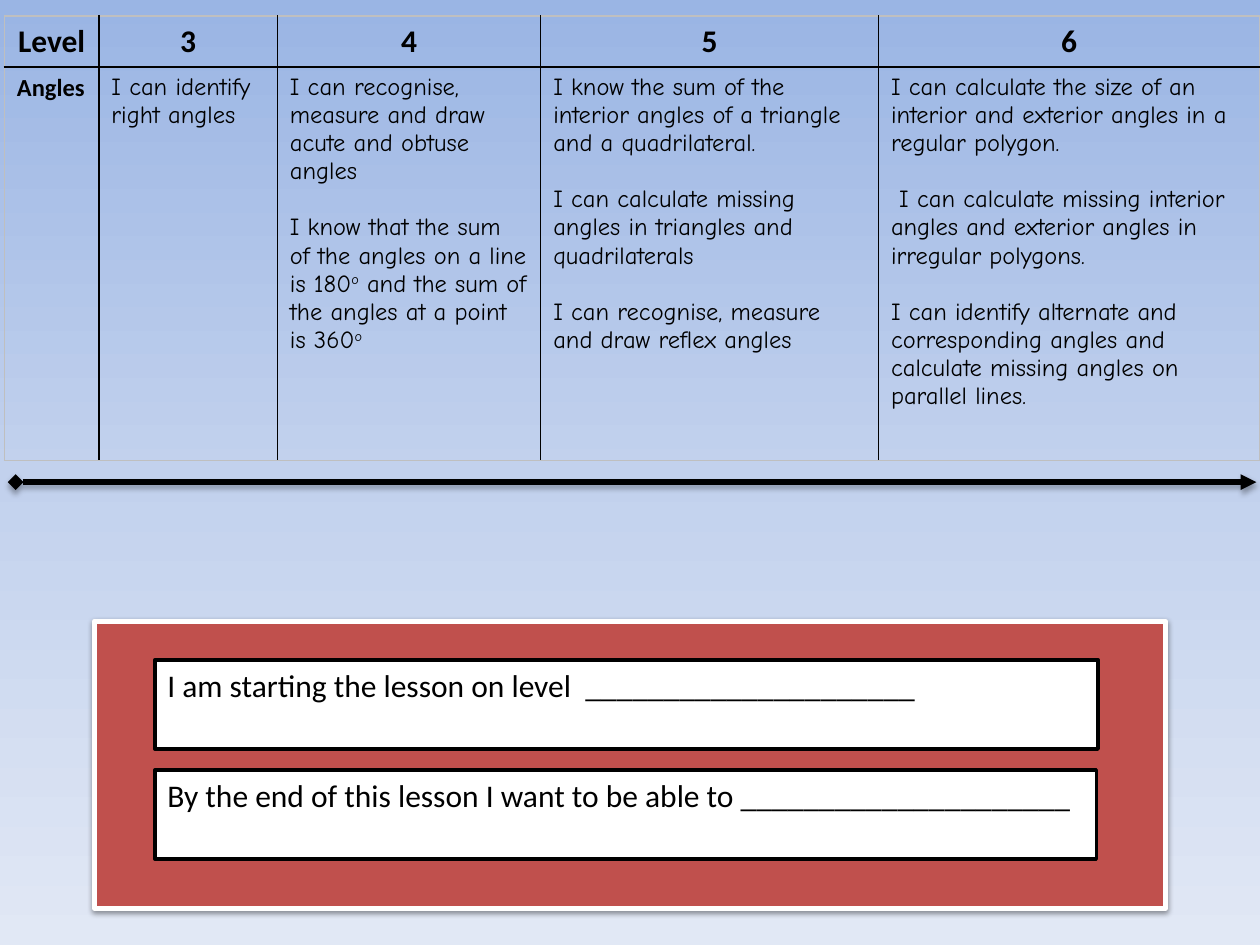
import copy

import pptx
import pptx.dml.color
import pptx.enum.shapes
import pptx.enum.text
import pptx.oxml
import pptx.oxml.ns
import pptx.util

Pt = pptx.util.Pt
RGBColor = pptx.dml.color.RGBColor
qn = pptx.oxml.ns.qn
ALIGN = pptx.enum.text.PP_ALIGN

BLACK = RGBColor(0x00, 0x00, 0x00)
WHITE = RGBColor(0xFF, 0xFF, 0xFF)
RED = RGBColor(0xC0, 0x50, 0x4D)
GREY = RGBColor(0xBF, 0xBF, 0xBF)
SKY_STOPS = [
    (0, RGBColor(0x9A, 0xB5, 0xE4)),
    (0.5, RGBColor(0xC2, 0xD1, 0xED)),
    (1, RGBColor(0xE1, 0xE8, 0xF5)),
]

HEADER = {"name": "Calibri", "size": Pt(18), "bold": True}
TOPIC = {"name": "Calibri", "size": Pt(14), "bold": True}
STATEMENT = {"name": "Comic Neue", "size": Pt(14), "bold": False}
PROMPT = {"name": "Calibri", "size": Pt(18), "bold": False}

COLUMN_WIDTHS = [54, 102, 150.5, 193, 218]
ROW_HEIGHTS = [29, 225]
DEGREE = "^"
LEVELS = [
    ("Level", ["Angles"]),
    ("3", ["I can identify right angles"]),
    ("4", [
        "I can recognise, measure and draw acute and obtuse angles",
        "I know that the sum of the angles on a line is 180^ and the sum of "
        "the angles at a point is 360^",
    ]),
    ("5", [
        "I know the sum of the interior angles of a triangle and a quadrilateral.",
        "I can calculate missing angles in triangles and quadrilaterals",
        "I can recognise, measure and draw reflex angles",
    ]),
    ("6", [
        "I can calculate the size of an interior and exterior angles in a "
        "regular polygon.",
        " I can calculate missing interior angles and exterior angles in "
        "irregular polygons.",
        "I can identify alternate and corresponding angles and calculate "
        "missing angles on parallel lines.",
    ]),
]
BLANK = "_" * 21
PROMPTS = [
    (377, 539, "I am starting the lesson on level  " + BLANK),
    (440, 538, "By the end of this lesson I want to be able to " + BLANK),
]


def element(xml):
    namespace = pptx.oxml.ns.nsdecls("a")
    return pptx.oxml.parse_xml(xml.replace(">", f" {namespace}>", 1))


def set_background(slide):
    fill = slide.background.fill
    fill.gradient()
    fill.gradient_angle = 270
    stop_list = slide.element.find(".//" + qn("a:gsLst"))
    stop_list.append(copy.deepcopy(stop_list[-1]))
    for stop, (position, color) in zip(fill.gradient_stops, SKY_STOPS):
        stop.position = position
        stop.color.rgb = color


def add_shadow(shape, distance, opacity):
    shape.element.spPr.append(element(
        f'<a:effectLst><a:outerShdw blurRad="{Pt(3.1)}" dist="{Pt(distance)}" '
        f'dir="5400000" rotWithShape="0"><a:srgbClr val="000000">'
        f'<a:alpha val="{opacity * 1000}"/></a:srgbClr></a:outerShdw></a:effectLst>'
    ))


def add_run(paragraph, text, font_format):
    run = paragraph.add_run()
    run.text = text
    for attribute, value in font_format.items():
        setattr(run.font, attribute, value)
    run.font.color.rgb = BLACK
    return run


def add_text(paragraph, text, font_format):
    for index, part in enumerate(text.split(DEGREE)):
        if index:
            degree = add_run(paragraph, "o", font_format)
            degree.font._element.set("baseline", "30000")
        if part:
            add_run(paragraph, part, font_format)


def set_borders(cell, colors):
    properties = cell._tc.get_or_add_tcPr()
    for index, (side, color) in enumerate(colors.items()):
        properties.insert(index, element(
            f'<a:ln{side} w="{Pt(1)}"><a:solidFill><a:srgbClr val="{color}"/>'
            f"</a:solidFill></a:ln{side}>"
        ))


def fill_cell(cell, texts, font_format, alignment):
    cell.fill.background()
    for index, text in enumerate(texts):
        frame = cell.text_frame
        paragraph = frame.add_paragraph() if index else frame.paragraphs[0]
        paragraph.alignment = alignment
        if index:
            paragraph.space_before = Pt(16)
        add_text(paragraph, text, font_format)


def add_level_table(slide):
    table = slide.shapes.add_table(
        len(ROW_HEIGHTS), len(LEVELS), Pt(2.5), Pt(9),
        Pt(sum(COLUMN_WIDTHS)), Pt(sum(ROW_HEIGHTS))
    ).table
    table.first_row = table.horz_banding = False
    for column, width in zip(table.columns, COLUMN_WIDTHS):
        column.width = Pt(width)
    for row, height in zip(table.rows, ROW_HEIGHTS):
        row.height = Pt(height)
    last = len(LEVELS) - 1
    for index, (level, statements) in enumerate(LEVELS):
        header, body = table.cell(0, index), table.cell(1, index)
        fill_cell(header, [level], HEADER, ALIGN.CENTER)
        fill_cell(body, statements, STATEMENT if index else TOPIC, ALIGN.LEFT)
        sides = {"L": BLACK if index else GREY, "R": BLACK if index < last else GREY}
        set_borders(header, {**sides, "T": GREY, "B": BLACK})
        set_borders(body, {**sides, "T": BLACK, "B": GREY})


def add_progress_arrow(slide):
    arrow = slide.shapes.add_connector(
        pptx.enum.shapes.MSO_CONNECTOR.STRAIGHT, Pt(9), Pt(275.5), Pt(718), Pt(275.5)
    )
    arrow.line.color.rgb = BLACK
    arrow.line.width = Pt(3)
    line = arrow.line._get_or_add_ln()
    line.append(element('<a:headEnd type="diamond"></a:headEnd>'))
    line.append(element('<a:tailEnd type="triangle"></a:tailEnd>'))
    add_shadow(arrow, 1.8, 35)


def add_box(slide, left, top, width, height, fill, line, line_width):
    box = slide.shapes.add_shape(
        pptx.enum.shapes.MSO_SHAPE.RECTANGLE, Pt(left), Pt(top), Pt(width), Pt(height)
    )
    box.fill.solid()
    box.fill.fore_color.rgb = fill
    box.line.color.rgb = line
    box.line.width = Pt(line_width)
    return box


def add_prompt(slide, top, width, text):
    box = add_box(slide, 88.5, top, width, 51, WHITE, BLACK, 2)
    box.shadow.inherit = False
    frame = box.text_frame
    frame.word_wrap = True
    frame.vertical_anchor = pptx.enum.text.MSO_ANCHOR.TOP
    frame.paragraphs[0].alignment = ALIGN.LEFT
    add_text(frame.paragraphs[0], text, PROMPT)


def main():
    presentation = pptx.Presentation()
    presentation.slide_width = Pt(720)
    presentation.slide_height = Pt(540)
    slide = presentation.slides.add_slide(presentation.slide_layouts[6])
    set_background(slide)
    panel = add_box(slide, 54, 355, 612, 164, RED, WHITE, 3)
    add_shadow(panel, 1.6, 38)
    add_level_table(slide)
    add_progress_arrow(slide)
    for top, width, text in PROMPTS:
        add_prompt(slide, top, width, text)
    presentation.save("out.pptx")


if __name__ == "__main__":
    main()
